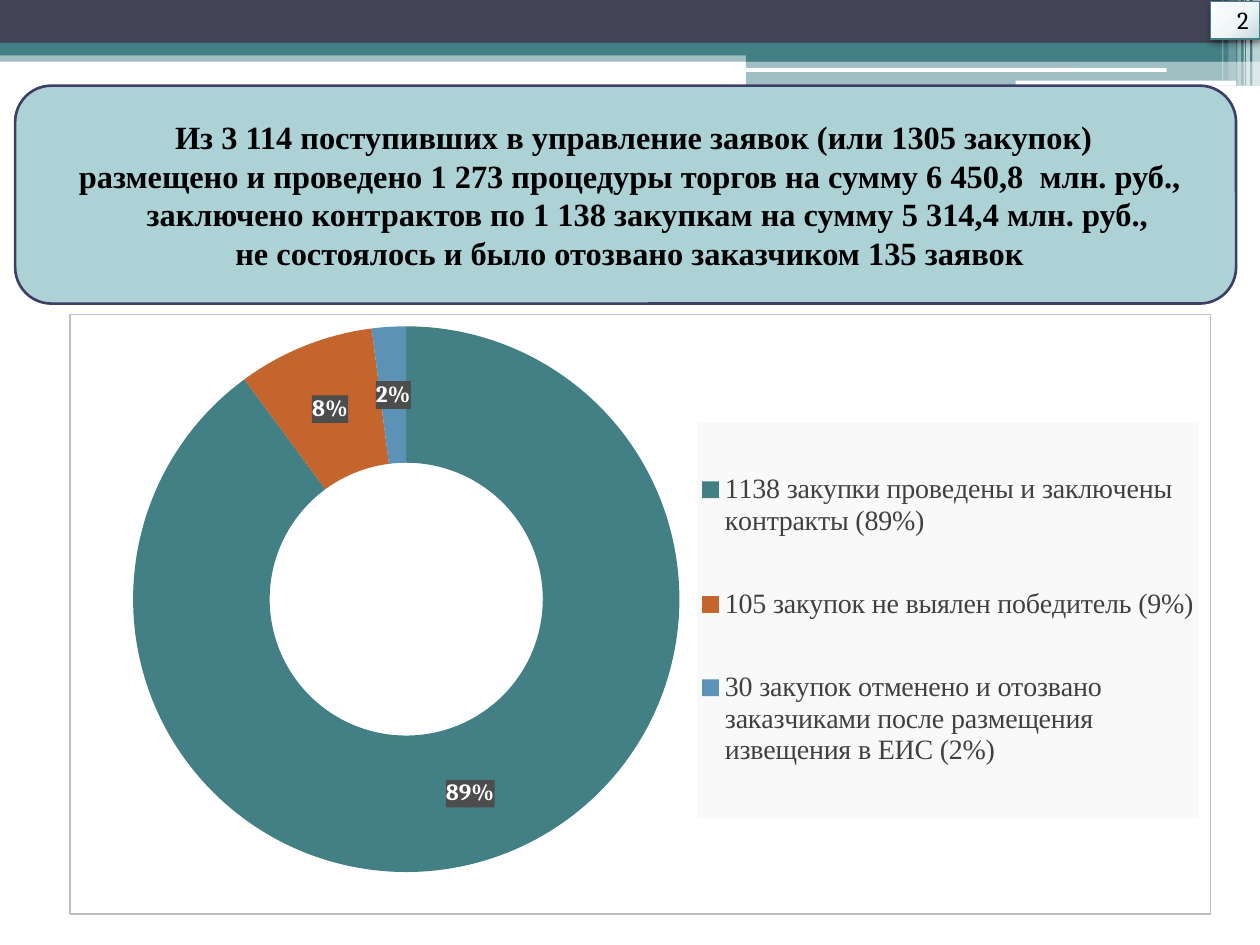
"""Build a procurement results slide with a summary panel and a doughnut chart."""
from dataclasses import dataclass

from lxml import etree
from pptx import Presentation
from pptx.chart.data import CategoryChartData
from pptx.chart.chart import Chart
from pptx.dml.color import RGBColor
from pptx.enum.chart import XL_CHART_TYPE, XL_LEGEND_POSITION
from pptx.enum.shapes import MSO_SHAPE
from pptx.enum.text import MSO_ANCHOR, MSO_AUTO_SIZE, PP_ALIGN
from pptx.oxml import parse_xml
from pptx.oxml.ns import qn
from pptx.slide import Slide
from pptx.util import Inches, Pt

RECTANGLE, ROUNDED = MSO_SHAPE.RECTANGLE, MSO_SHAPE.ROUNDED_RECTANGLE
CENTER, MIDDLE, NO_FIT = PP_ALIGN.CENTER, MSO_ANCHOR.MIDDLE, MSO_AUTO_SIZE.NONE
DOUGHNUT, RIGHT = XL_CHART_TYPE.DOUGHNUT, XL_LEGEND_POSITION.RIGHT
WHITE, BLACK = RGBColor(255, 255, 255), RGBColor(0, 0, 0)
TEAL, ORANGE, BLUE = RGBColor(0x43, 0x80, 0x86), RGBColor(0xC4, 0x65, 0x2D), RGBColor(0x5C, 0x92, 0xB5)
SLATE, PANEL, OUTLINE = RGBColor(0x42, 0x44, 0x56), RGBColor(0xAD, 0xD2, 0xD6), RGBColor(0x3D, 0x3E, 0x66)
DARK_GRAY, LEGEND_FILL = RGBColor(0x40, 0x40, 0x40), RGBColor(0xF9, 0xF9, 0xF9)
LABEL_FILL, BORDER = RGBColor(0x4D, 0x4D, 0x4D), RGBColor(0xBF, 0xBF, 0xBF)
SERIF, HEADING = "Times New Roman", "Cambria"
DRAWING = 'xmlns:a="http://schemas.openxmlformats.org/drawingml/2006/main"'
CHART = 'xmlns:c="http://schemas.openxmlformats.org/drawingml/2006/chart"'


@dataclass
class Band:
    left: float
    top: float
    width: float
    height: float
    color: RGBColor
    opacity: int = 100
    rounded: bool = False


@dataclass
class Slice:
    label: str
    percent: int
    color: RGBColor


BANDS = [
    Band(0, 0.4, 10, 0.09, TEAL, 50),
    Band(0, 0, 10, 0.34, SLATE),
    Band(0, 0.34, 10, 0.1, TEAL),
    Band(5.92, 0.39, 4.08, 0.1, TEAL),
    Band(5.92, 0.48, 4.08, 0.2, TEAL, 50),
    Band(5.91, 0.54, 3.35, 0.03, WHITE, rounded=True),
    Band(8.06, 0.64, 1.75, 0.04, WHITE, rounded=True),
    Band(9.94, 0, 0.06, 0.68, WHITE, 65),
    Band(9.89, 0, 0.03, 0.68, WHITE, 65),
    Band(9.87, 0, 0.01, 0.68, WHITE, 60),
    Band(9.82, 0, 0.03, 0.68, WHITE, 40),
    Band(9.75, 0, 0.06, 0.64, WHITE, 20),
    Band(9.7, 0, 0.01, 0.64, WHITE, 30),
]
SUMMARY = [
    "Из 3 114 поступивших в управление заявок (или 1305 закупок)",
    "размещено и проведено 1 273 процедуры торгов на сумму 6 450,8  млн. руб.,  "
    "заключено контрактов по 1 138 закупкам на сумму 5 314,4 млн. руб., ",
    "не состоялось и было отозвано заказчиком 135 заявок ",
]
SLICES = [
    Slice("1138 закупки проведены и заключены контракты (89%)", 89, TEAL),
    Slice("105 закупок не выялен победитель (9%)", 8, ORANGE),
    Slice("30 закупок отменено и отозвано заказчиками после размещения извещения в ЕИС (2%)", 2, BLUE),
]


def set_font(font, name: str, size: float, color: RGBColor, bold: bool = False) -> None:
    font.name, font.size, font.bold = name, Pt(size), bold
    font.color.rgb = color


def add_band(slide: Slide, band: Band) -> None:
    kind = ROUNDED if band.rounded else RECTANGLE
    shape = slide.shapes.add_shape(
        kind, Inches(band.left), Inches(band.top), Inches(band.width), Inches(band.height))
    shape.shadow.inherit = False
    shape.line.fill.background()
    shape.fill.solid()
    shape.fill.fore_color.rgb = band.color
    if band.opacity < 100:
        color = shape._element.spPr.find(".//" + qn("a:srgbClr"))
        etree.SubElement(color, qn("a:alpha"), val=str(band.opacity * 1000))


def add_summary(slide: Slide) -> None:
    body = slide.placeholders[1]
    body.left, body.top, body.width, body.height = Inches(0.12), Inches(0.68), Inches(9.69), Inches(1.73)
    body._element.spPr.append(parse_xml(f'<a:prstGeom {DRAWING} prst="roundRect"><a:avLst/></a:prstGeom>'))
    body.fill.solid()
    body.fill.fore_color.rgb = PANEL
    body.line.color.rgb = OUTLINE
    body.line.width = Pt(1.5)
    frame = body.text_frame
    frame.text = "\n".join(SUMMARY)
    frame.auto_size, frame.vertical_anchor = NO_FIT, MIDDLE
    for paragraph in frame.paragraphs:
        paragraph.alignment = CENTER
        paragraph.space_before = Pt(0)
        properties = paragraph._p.get_or_add_pPr()
        properties.set("marL", str(Inches(0.4)))
        properties.set("indent", str(Inches(-0.28)))
        etree.SubElement(properties, qn("a:buNone"))
        set_font(paragraph.runs[0].font, SERIF, 18.5, BLACK, True)
    slide.shapes._spTree.append(body._element)


def chart_fill(color: RGBColor, line: str = "<a:ln><a:noFill/></a:ln>"):
    return parse_xml(f'<c:spPr {CHART} {DRAWING}><a:solidFill><a:srgbClr val="{color}"/></a:solidFill>{line}</c:spPr>')


def chart_layout(left: float, top: float, width: float, height: float, target: str = ""):
    sizes = "".join(f'<c:{key} val="{value}"/>' for key, value in zip("xywh", (left, top, width, height)))
    return parse_xml(
        f'<c:layout {CHART}><c:manualLayout>{target}<c:xMode val="edge"/><c:yMode val="edge"/>'
        f"{sizes}</c:manualLayout></c:layout>")


def format_legend(chart: Chart) -> None:
    chart.has_legend = True
    legend = chart.legend
    legend.position = RIGHT
    legend.include_in_layout = False
    set_font(legend.font, SERIF, 16, DARK_GRAY)
    element = legend._element
    for layout in element.findall(qn("c:layout")):
        element.remove(layout)
    element.find(qn("c:legendPos")).addnext(chart_layout(0.55, 0.18, 0.44, 0.66))
    element.find(qn("c:txPr")).addprevious(chart_fill(LEGEND_FILL))


def add_results_chart(slide: Slide) -> None:
    data = CategoryChartData()
    data.categories = [item.label for item in SLICES]
    data.add_series("Series 1", [item.percent for item in SLICES])
    chart = slide.shapes.add_chart(
        DOUGHNUT, Inches(0.55), Inches(2.49), Inches(9.06), Inches(4.77), data).chart
    chart.has_title = False
    set_font(chart.font, HEADING, 10, BLACK)
    format_legend(chart)
    plot = chart.plots[0]
    for index, item in enumerate(SLICES):
        fill = plot.series[0].points[index].format.fill
        fill.solid()
        fill.fore_color.rgb = item.color
    labels = plot.series[0].data_labels
    labels.show_value = True
    labels.number_format, labels.number_format_is_linked = '0"%"', False
    set_font(labels.font, HEADING, 13.3, WHITE, True)
    labels._element.find(qn("c:txPr")).addprevious(chart_fill(LABEL_FILL))
    space = chart._chartSpace
    border = f'<a:ln w="{Pt(0.75)}"><a:solidFill><a:srgbClr val="{BORDER}"/></a:solidFill></a:ln>'
    space.find(qn("c:txPr")).addprevious(chart_fill(WHITE, border))
    area = space.find(".//" + qn("c:plotArea"))
    for layout in area.findall(qn("c:layout")):
        area.remove(layout)
    area.insert(0, chart_layout(0.02, 0.02, 0.55, 0.91, '<c:layoutTarget val="inner"/>'))


def add_page_number(slide: Slide) -> None:
    shape = slide.shapes.add_shape(RECTANGLE, Inches(9.61), Inches(0.01), Inches(0.39), Inches(0.3))
    shape.line.color.rgb = TEAL
    shape.line.width = Pt(0.75)
    stops = "".join(
        f'<a:gs pos="{position}000"><a:srgbClr val="{color}"/></a:gs>'
        for position, color in ((0, "FEFEFE"), (55, "F0F6F6"), (100, "BFD9DD")))
    properties = shape._element.spPr
    properties.find(qn("a:prstGeom")).addnext(parse_xml(
        f'<a:gradFill {DRAWING}><a:gsLst>{stops}</a:gsLst><a:path path="circle">'
        '<a:fillToRect l="-40000" t="-90000" r="140000" b="190000"/></a:path></a:gradFill>'))
    properties.append(parse_xml(
        f'<a:effectLst {DRAWING}><a:outerShdw blurRad="{Pt(4.1)}" dist="{Pt(2)}" dir="5400000">'
        '<a:srgbClr val="000000"><a:alpha val="40000"/></a:srgbClr></a:outerShdw></a:effectLst>'))
    shape.text_frame.text = "2"
    paragraph = shape.text_frame.paragraphs[0]
    paragraph.alignment = CENTER
    paragraph.space_before = Pt(3)
    paragraph._p.get_or_add_pPr().set("marL", str(Inches(0.12)))
    set_font(paragraph.runs[0].font, HEADING, 14, BLACK)


def main() -> None:
    presentation = Presentation()
    presentation.slide_width, presentation.slide_height = Inches(10), Inches(7.5)
    slide = presentation.slides.add_slide(presentation.slide_layouts[1])
    title = slide.shapes.title._element
    title.getparent().remove(title)
    for band in BANDS:
        add_band(slide, band)
    add_summary(slide)
    add_results_chart(slide)
    add_page_number(slide)
    presentation.save("out.pptx")


if __name__ == "__main__":
    main()
